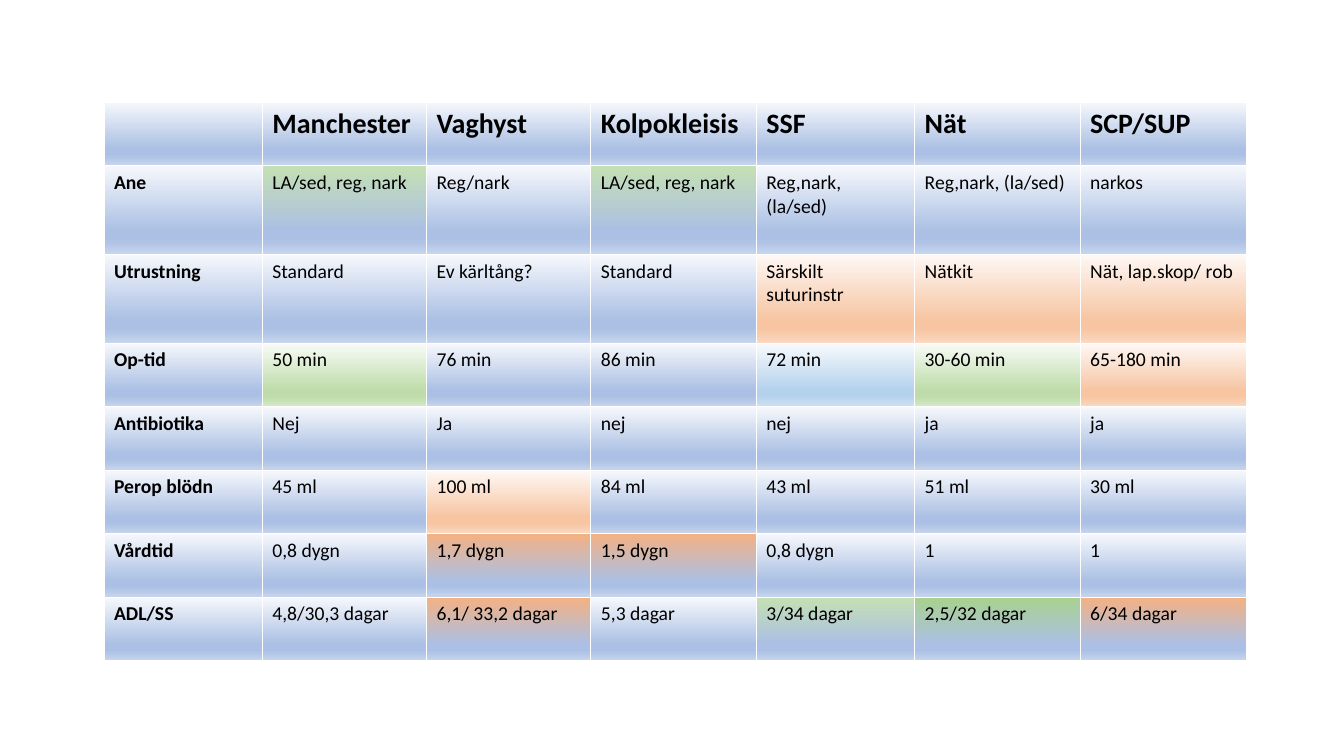
"""Build a slide comparing surgical methods for prolapse in a colour-graded table."""
from copy import deepcopy

from pptx import Presentation
from pptx.dml.color import RGBColor as RGB
from pptx.oxml.ns import qn
from pptx.util import Cm, Pt

BLUE = ["F6F8FC", "ABC0E4", "ABC0E4", "C7D5ED"]
TONES = {
    "blue": BLUE,
    "orange": ["FEF8F5", "F7C5A2", "F7C5A2", "FAD8C1"],
    "green": ["F8FBF6", "BEDCAA", "BEDCAA", "D4E8C6"],
    "sky": ["F7FAFD", "B5D2EC", "B5D2EC", "CEE1F2"],
    "orange to blue": ["F4B183"] + BLUE[1:],
    "light green to blue": ["C5E0B4"] + BLUE[1:],
    "green to blue": ["A9D18E"] + BLUE[1:],
}
POSITIONS = [0, 0.74, 0.83, 1]

COMPARISON = [
    ["", "Manchester", "Vaghyst", "Kolpokleisis", "SSF", "Nät", "SCP/SUP"],
    ["Ane", "LA/sed, reg, nark", "Reg/nark", "LA/sed, reg, nark",
     "Reg,nark, (la/sed)", "Reg,nark, (la/sed)", "narkos"],
    ["Utrustning", "Standard", "Ev kärltång?", "Standard",
     "Särskilt suturinstr", "Nätkit", "Nät, lap.skop/ rob"],
    ["Op-tid", "50 min", "76 min", "86 min", "72 min", "30-60 min", "65-180 min"],
    ["Antibiotika", "Nej", "Ja", "nej", "nej", "ja", "ja"],
    ["Perop blödn", "45 ml", "100 ml", "84 ml", "43 ml", "51 ml", "30 ml"],
    ["Vårdtid", "0,8 dygn", "1,7 dygn", "1,5 dygn", "0,8 dygn", "1", "1"],
    ["ADL/SS", "4,8/30,3 dagar", "6,1/ 33,2 dagar", "5,3 dagar",
     "3/34 dagar", "2,5/32 dagar", "6/34 dagar"],
]
HIGHLIGHTS = {
    "orange": [("Utrustning", "SSF"), ("Utrustning", "Nät"), ("Utrustning", "SCP/SUP"),
               ("Op-tid", "SCP/SUP"), ("Perop blödn", "Vaghyst")],
    "green": [("Op-tid", "Manchester"), ("Op-tid", "Nät")],
    "sky": [("Op-tid", "SSF")],
    "orange to blue": [("Vårdtid", "Vaghyst"), ("Vårdtid", "Kolpokleisis"),
                       ("ADL/SS", "Vaghyst"), ("ADL/SS", "SCP/SUP")],
    "light green to blue": [("Ane", "Manchester"), ("Ane", "Kolpokleisis"),
                            ("ADL/SS", "SSF")],
    "green to blue": [("ADL/SS", "Nät")],
}
WIDTHS = [3.99, 4.14, 4.14, 4.17, 3.99, 4.17, 4.19]
HEIGHTS = [1.6, 2.24, 2.24] + [1.6] * 5


def color(hex_value):
    return RGB.from_string(hex_value)


def grade(cell, tone):
    cell.fill.gradient()
    cell.fill.gradient_angle = 270
    stop_list = cell._tc.find(".//" + qn("a:gsLst"))
    for stop in list(stop_list):
        stop_list.append(deepcopy(stop))
    for stop, position, shade in zip(cell.fill.gradient_stops, POSITIONS, TONES[tone]):
        stop.position = position
        stop.color.rgb = color(shade)


deck = Presentation()
deck.slide_width, deck.slide_height = Cm(33.87), Cm(19.05)
slide = deck.slides.add_slide(deck.slide_layouts[6])

methods = slide.shapes.add_table(
    len(HEIGHTS), len(WIDTHS), Cm(2.62), Cm(2.57), Cm(sum(WIDTHS)), Cm(sum(HEIGHTS))
).table
methods.horz_banding = False
for column, width in zip(methods.columns, WIDTHS):
    column.width = Cm(width)
for row, height in zip(methods.rows, HEIGHTS):
    row.height = Cm(height)

tone_of = {place: tone for tone, places in HIGHLIGHTS.items() for place in places}
for r, entries in enumerate(COMPARISON):
    for c, entry in enumerate(entries):
        cell = methods.cell(r, c)
        grade(cell, tone_of.get((entries[0], COMPARISON[0][c]), "blue"))
        cell.text = entry
        font = cell.text_frame.paragraphs[0].font
        font.color.rgb = color("000000")
        look = {"name": "Calibri", "size": Pt(14 if r else 20), "bold": r == 0 or c == 0}
        for name, value in look.items():
            setattr(font, name, value)
        for run in cell.text_frame.paragraphs[0].runs:
            run.font.color.rgb = color("000000")
            for name, value in look.items():
                setattr(run.font, name, value)

deck.save("out.pptx")
